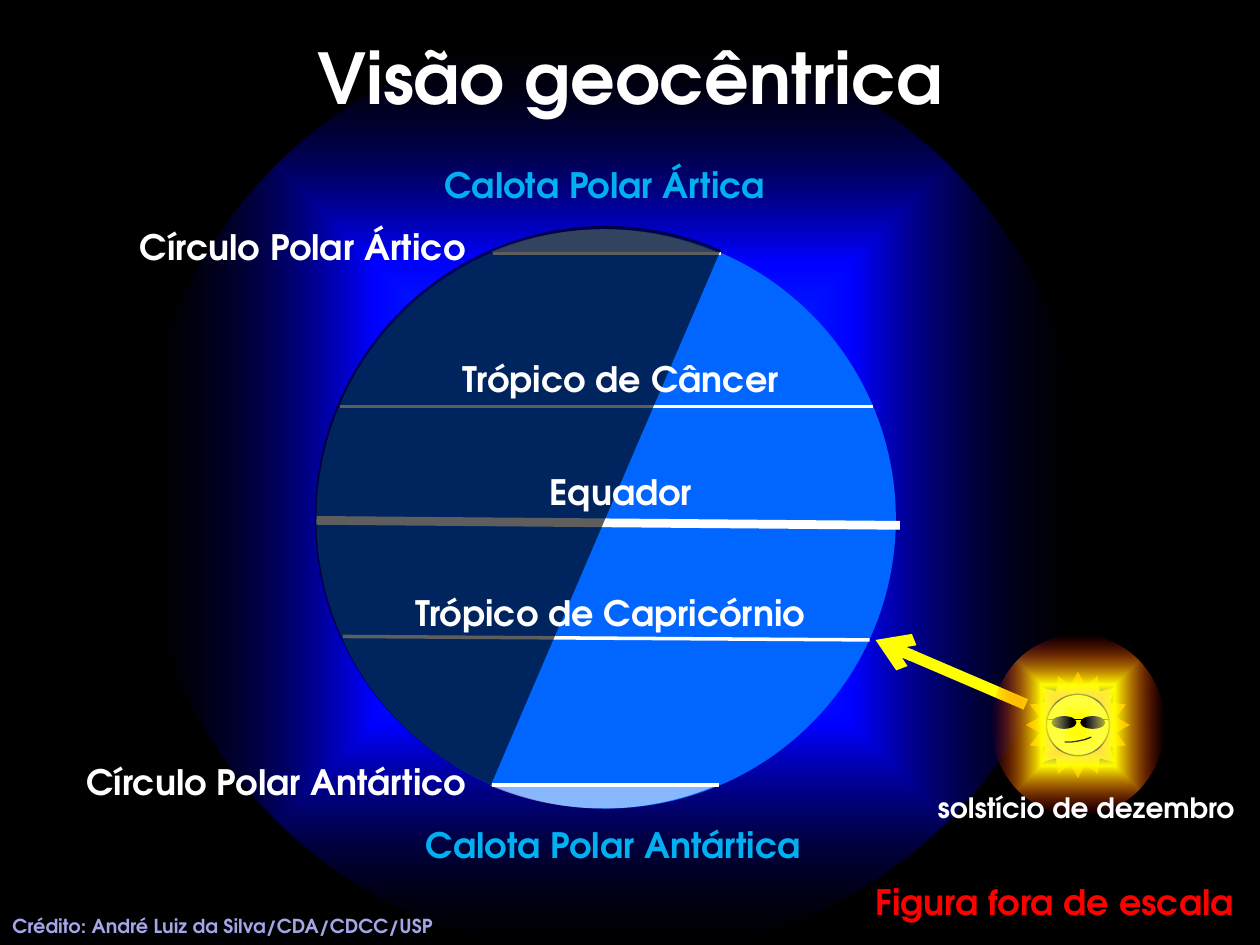
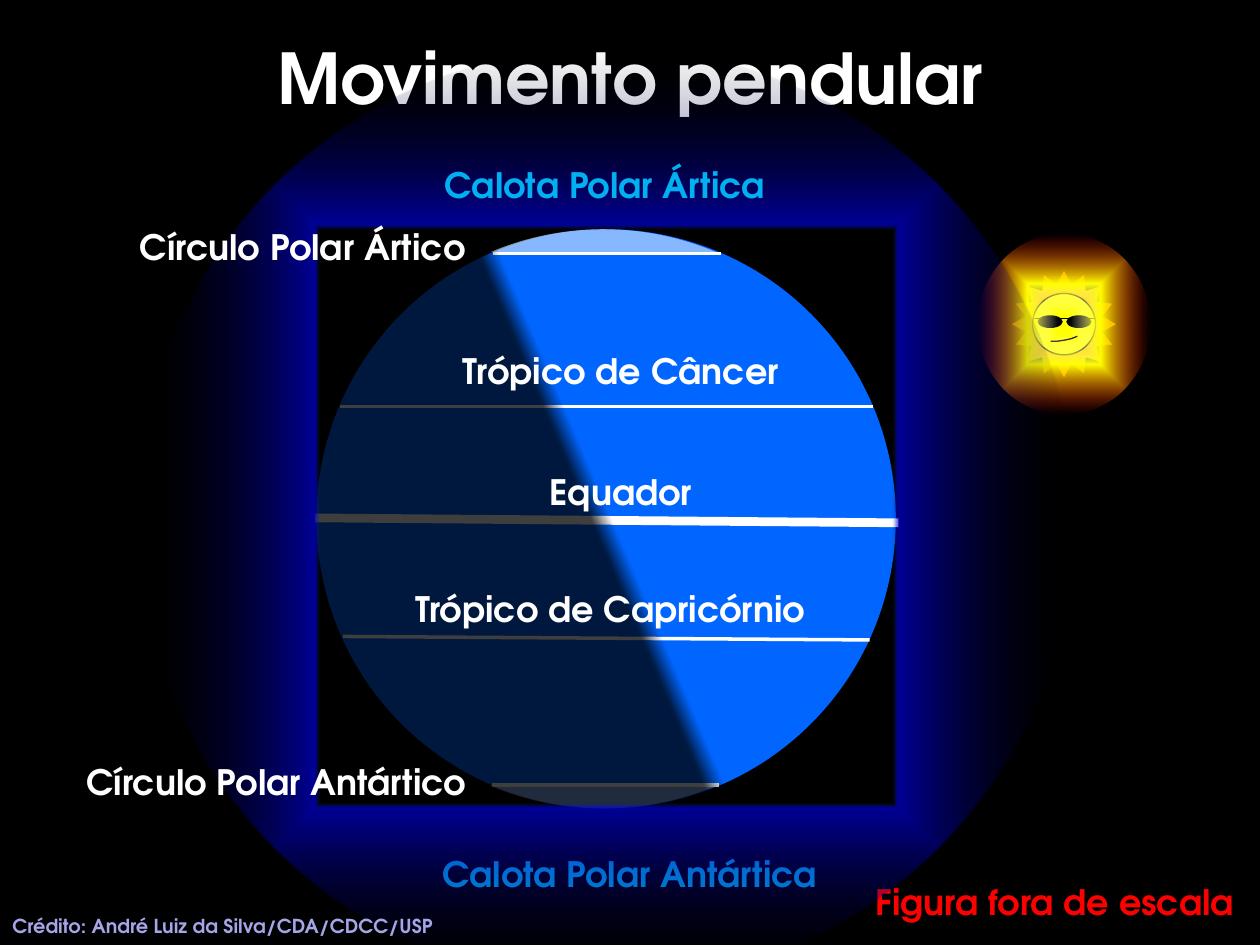
from pptx import Presentation
from pptx.dml.color import RGBColor
from pptx.enum.shapes import MSO_CONNECTOR, MSO_SHAPE
from pptx.enum.text import MSO_ANCHOR, PP_ALIGN
from pptx.oxml import parse_xml
from pptx.oxml.ns import nsdecls, qn
from pptx.util import Cm, Pt

FONT = "TeX Gyre Adventor"
WIDTH, HEIGHT = 25.4, 19.05
BLACK, WHITE, SKY = "000000", "FFFFFF", "00B0F0"
YELLOW, AMBER, OCEAN = "FFFF00", "FFC000", "0066FF"
HAIRLINE = 0.75

# Text styles: size, colour, alignment, height
STYLES = {
    "title": (40, WHITE, PP_ALIGN.CENTER, 3.18),
    "line": (20, WHITE, PP_ALIGN.CENTER, 1.12),
    "cap": (20, SKY, PP_ALIGN.CENTER, 1.12),
    "notice": (20, "FF0000", PP_ALIGN.LEFT, 1.12),
    "season": (16, WHITE, PP_ALIGN.CENTER, 0.94),
    "credit": (11, "A5A5E9", PP_ALIGN.LEFT, 0.74),
}

# Labels: text, style, left, top, width
ARCTIC_CIRCLE = ("Círculo Polar Ártico", "line", 0.3, 4.42, 11.61)
ANTARCTIC_CIRCLE = ("Círculo Polar Antártico", "line", -0.23, 15.21, 11.61)
ARCTIC_CAP = ("Calota Polar Ártica", "cap", 7.7, 3.18, 8.99)
EQUATOR = ("Equador", "line", 6.71, 9.37, 11.61)
NOTICE = ("Figura fora de escala", "notice", 17.4, 17.63, 8.99)
SEASON = ("solstício de dezembro", "season", 18.49, 15.82, 6.81)
CREDIT = ("Crédito: André Luiz da Silva/CDA/CDCC/USP", "credit", 0, 18.31, 15.32)


def antarctic_cap(left, top):
    return ("Calota Polar Antártica", "cap", left, top, 8.99)


def tropics(cancer_top, capricorn_top):
    return [("Trópico de Câncer", "line", 6.71, cancer_top, 11.61),
            ("Trópico de Capricórnio", "line", 6.5, capricorn_top, 11.61)]


# Parallels: start x, start y, end x, end y, weight
POLAR_CIRCLES = [(9.93, 5.11, 14.53, 5.11, 2), (9.91, 15.82, 14.5, 15.82, 2)]
TROPIC_LINES = [(6.86, 8.2, 17.6, 8.2, 2), (6.91, 12.83, 17.53, 12.9, 2)]
EQUATOR_LINE = (6.38, 10.49, 18.14, 10.59, 5)

GLOBE = (6.38, 4.62, 11.68, 11.68)
CAP_BOX = (6.32, 4.62, 11.68, 11.68)
CAP_ANGLES = (67.05, 113)

# Gradient stops: position, colour, opacity in percent
HALO_STOPS = [(0, OCEAN, 100), (50, "0000FF", 100), (100, BLACK, 5)]
RING_STOPS = [(61, "003179", 0), (62, "0000FF", 59), (100, BLACK, 0)]
GLOW_STOPS = [(7, WHITE, 0), (42, YELLOW, 100), (100, "FF0000", 0)]
NIGHT_STOPS = [(49, BLACK, 75), (50, BLACK, 0)]

# The sun, measured from the corner of its glow
GLOW_SIZE = (3.48, 3.63)
STAR_SIZE = (2.16, 2.21)
FACE_SIZE = (1.27, 1.24)
LENS_LEFTS, LENS_TOP, LENS_SIZE = (1.22, 1.8), 1.65, (0.48, 0.23)
BRIDGE_Y = 1.7
MOUTH = [(1.47, 2.16), (1.6, 2.16), (1.74, 2.14), (1.88, 2.11), (2.01, 2.06)]


def colour(text):
    return RGBColor.from_string(text)


def lengths(values):
    return [Cm(value) for value in values]


def set_format(target, values):
    for name, value in values.items():
        setattr(target, name, value)


def set_outline(shape, line_colour):
    if line_colour:
        shape.line.color.rgb = colour(line_colour)
        shape.line.width = Pt(HAIRLINE)
    else:
        shape.line.fill.background()


def add_opacity(colour_element, percent):
    tag = f'<a:alpha {nsdecls("a")} val="{percent * 1000}"/>'
    colour_element.append(parse_xml(tag))


def add_figure(shapes, kind, box, fill=None, opacity=100, outline=None):
    shape = shapes.add_shape(kind, *lengths(box))
    shape.shadow.inherit = False
    set_outline(shape, outline)
    if fill:
        shape.fill.solid()
        shape.fill.fore_color.rgb = colour(fill)
        if opacity < 100:
            solid = shape._element.spPr.find(qn("a:solidFill"))
            add_opacity(solid[0], opacity)
    return shape


def add_gradient(shapes, kind, box, stops, linear=False):
    shape = add_figure(shapes, kind, box)
    shape.fill.background()
    stop_tags = "".join(
        f'<a:gs pos="{position * 1000}"><a:srgbClr val="{tint}">'
        f'<a:alpha val="{opacity * 1000}"/></a:srgbClr></a:gs>'
        for position, tint, opacity in stops)
    middle = 'l="50000" t="50000" r="50000" b="50000"'
    direction = ('<a:lin ang="0" scaled="0"/>' if linear else
                 f'<a:path path="shape"><a:fillToRect {middle}/></a:path>')
    properties = shape._element.spPr
    properties.replace(properties.find(qn("a:noFill")), parse_xml(
        f'<a:gradFill {nsdecls("a")} rotWithShape="1"><a:gsLst>{stop_tags}'
        f'</a:gsLst>{direction}</a:gradFill>'))
    return shape


def add_chord(page, box, angles, fill, opacity, rotation=0):
    chord = add_figure(page.shapes, MSO_SHAPE.CHORD, box, fill, opacity)
    for index, angle in enumerate(angles):
        chord.adjustments[index] = angle * 0.6  # 60000 units a degree
    chord.rotation = rotation


def add_line(shapes, ends, weight, line_colour=WHITE, arrow=False):
    line = shapes.add_connector(MSO_CONNECTOR.STRAIGHT, *lengths(ends))
    line.line.color.rgb = colour(line_colour)
    line.line.width = Pt(weight)
    if arrow:
        line.line._ln.append(parse_xml(f'<a:tailEnd {nsdecls("a")} type="arrow"/>'))
    line._element.spPr.append(parse_xml(f'<a:effectLst {nsdecls("a")}/>'))


def add_parallels(page, parallels):
    for *ends, weight in parallels:
        add_line(page.shapes, ends, weight)


def add_labels(page, labels):
    for text, style, left, top, width in labels:
        size, tint, alignment, height = STYLES[style]
        box = page.shapes.add_textbox(*lengths((left, top, width, height)))
        anchor = MSO_ANCHOR.MIDDLE if style == "title" else MSO_ANCHOR.TOP
        set_format(box.text_frame, {"word_wrap": True, "vertical_anchor": anchor})
        para = box.text_frame.paragraphs[0]
        para.alignment = alignment
        span = para.add_run()
        span.text = text
        set_format(span.font, {"name": FONT, "size": Pt(size), "bold": True})
        span.font.color.rgb = colour(tint)


def add_title(page, text):
    add_labels(page, [(text, "title", 0, -0.05, WIDTH)])


def add_globe(page):
    add_figure(page.shapes, MSO_SHAPE.OVAL, GLOBE, OCEAN)


def add_polar_caps(page):
    for rotation in (0, 180):
        add_chord(page, CAP_BOX, CAP_ANGLES, WHITE, 53, rotation)


def add_sun(page, left, top):
    shapes = page.shapes.add_group_shape().shapes

    def centred(size):
        return (left + (GLOW_SIZE[0] - size[0]) / 2,
                top + (GLOW_SIZE[1] - size[1]) / 2, *size)

    star = add_figure(shapes, MSO_SHAPE.STAR_16_POINT, centred(STAR_SIZE),
                      AMBER, outline=BLACK)
    star.adjustments[0] = 0.375
    face = centred(FACE_SIZE)
    add_figure(shapes, MSO_SHAPE.OVAL, face, YELLOW, outline=BLACK)

    points = [lengths((left + x, top + y)) for x, y in MOUTH]
    builder = shapes.build_freeform(*points[0])
    builder.add_line_segments(points[1:], close=False)
    mouth = builder.convert_to_shape()
    mouth.shadow.inherit = False
    mouth.fill.background()
    set_outline(mouth, BLACK)

    for lens_left in LENS_LEFTS:
        lens = (left + lens_left, top + LENS_TOP, *LENS_SIZE)
        add_figure(shapes, MSO_SHAPE.OVAL, lens, BLACK, outline=BLACK)
    bridge_y = top + BRIDGE_Y
    add_line(shapes, (face[0], bridge_y, face[0] + face[2], bridge_y),
             HAIRLINE, BLACK)
    add_gradient(shapes, MSO_SHAPE.OVAL, (left, top, *GLOW_SIZE), GLOW_STOPS)


def add_page(deck):
    page = deck.slides.add_slide(deck.slide_layouts[6])
    page.background.fill.solid()
    page.background.fill.fore_color.rgb = colour(BLACK)
    return page


def build_geocentric_view(deck):
    page = add_page(deck)
    add_gradient(page.shapes, MSO_SHAPE.OVAL, (2.82, 0.56, 19.05, 18.77), HALO_STOPS)
    add_globe(page)
    add_parallels(page, [EQUATOR_LINE, *TROPIC_LINES, *POLAR_CIRCLES])
    add_labels(page, [ARCTIC_CIRCLE, ANTARCTIC_CIRCLE])
    add_polar_caps(page)
    add_labels(page, [antarctic_cap(7.87, 16.48), ARCTIC_CAP])
    add_line(page.shapes, (20.68, 14.2, 17.65, 12.9), 6.5, YELLOW, arrow=True)
    add_sun(page, 19.99, 12.8)
    add_chord(page, (6.35, 4.55, 11.68, 11.73), (270, 90.5), BLACK, 63, 203)
    add_labels(page, [*tropics(7.09, 11.79), EQUATOR])
    add_title(page, "Visão geocêntrica")
    add_labels(page, [NOTICE, SEASON, CREDIT])


def build_pendular_motion(deck):
    page = add_page(deck)
    add_globe(page)
    add_parallels(page, POLAR_CIRCLES)
    add_polar_caps(page)
    add_labels(page, [NOTICE])
    add_parallels(page, [(6.35, 10.44, 18.11, 10.54, 5), *TROPIC_LINES])
    night = add_gradient(page.shapes, MSO_SHAPE.RECTANGLE,
                         (1.09, -0.79, 22.5, 22.5), NIGHT_STOPS, linear=True)
    night.rotation = 337
    add_labels(page, [antarctic_cap(8.2, 17.07), *tropics(6.93, 11.71), EQUATOR])
    add_title(page, "Movimento pendular")
    add_sun(page, 19.71, 4.72)
    add_gradient(page.shapes, MSO_SHAPE.OVAL, (2.77, 0.97, 18.9, 18.9), RING_STOPS)
    add_labels(page, [ARCTIC_CIRCLE, ANTARCTIC_CIRCLE, ARCTIC_CAP, CREDIT])


def main():
    deck = Presentation()
    set_format(deck, {"slide_width": Cm(WIDTH), "slide_height": Cm(HEIGHT)})
    build_geocentric_view(deck)
    build_pendular_motion(deck)
    deck.save("out.pptx")


if __name__ == "__main__":
    main()
